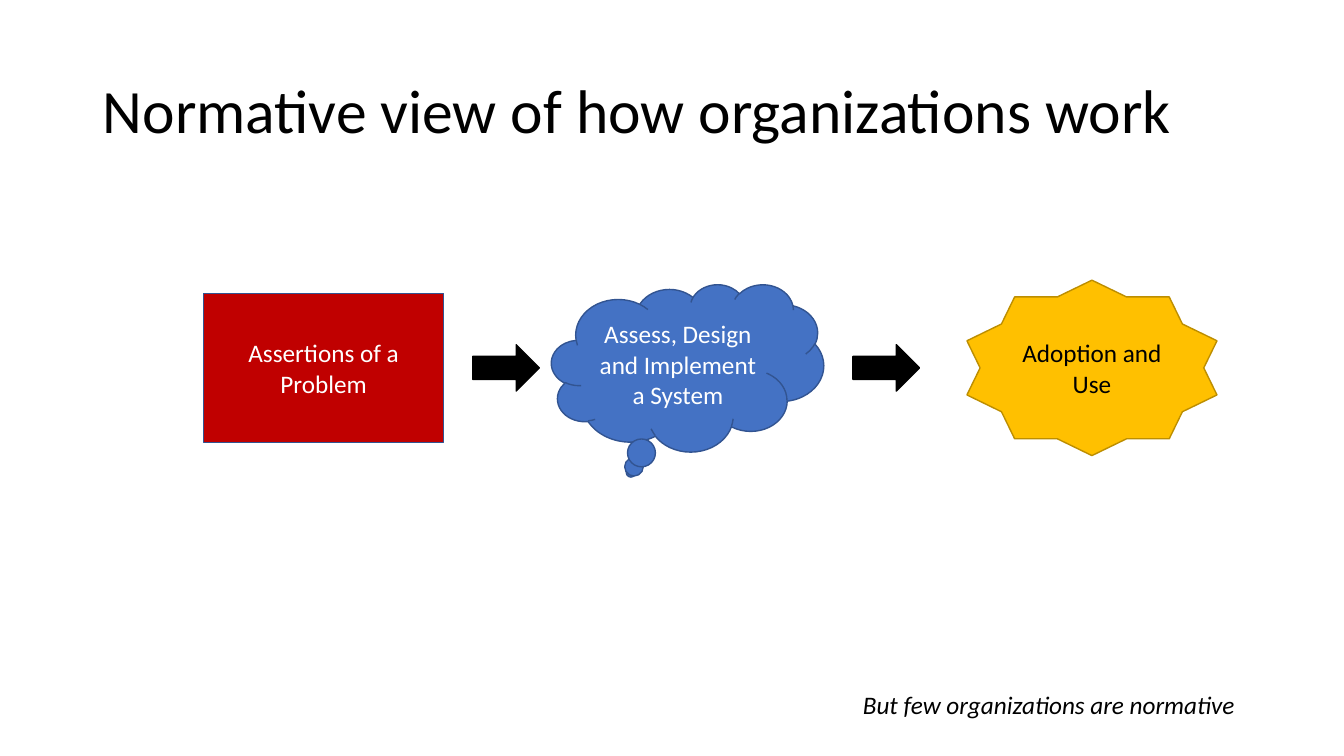
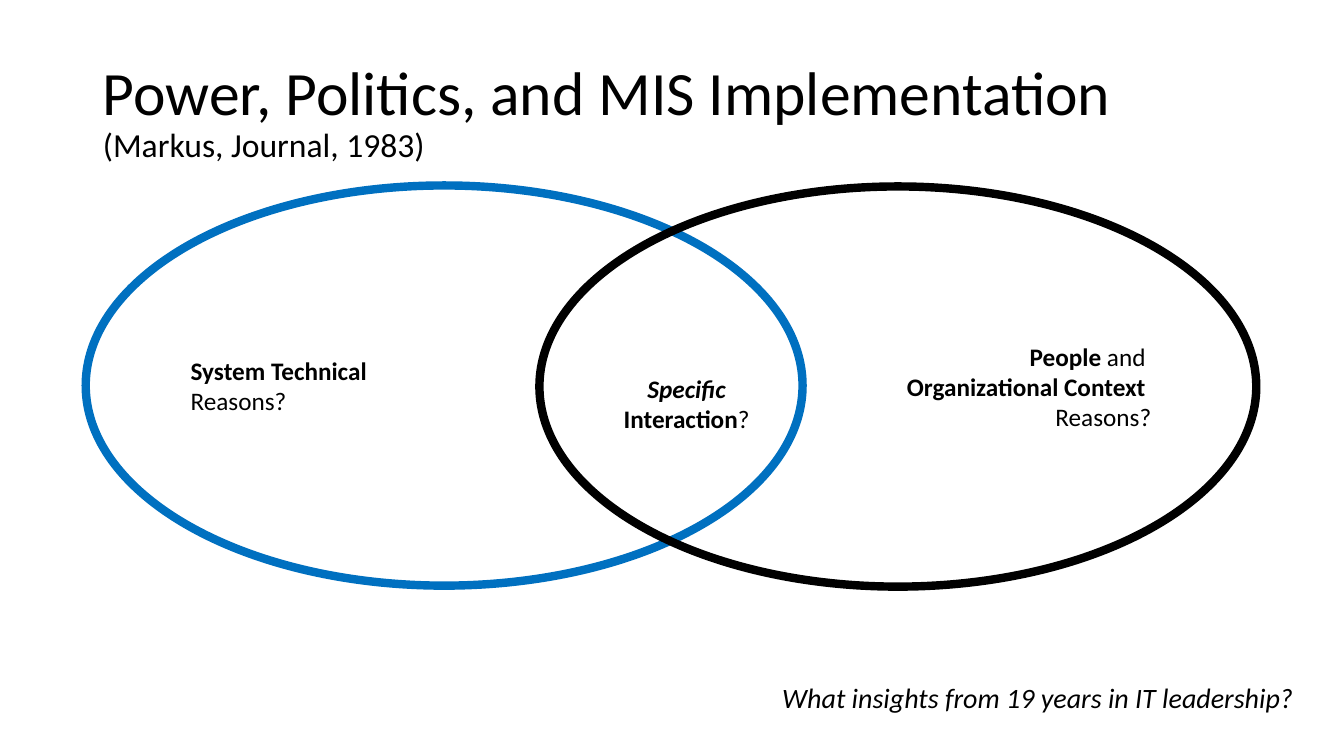
from pptx import Presentation
from pptx import util as u
from pptx.dml.color import RGBColor
from pptx.enum import shapes, text

WIDTH, HEIGHT = 13.33, 7.5
FONT = "Calibri"
COLORS = {"black": "000000", "white": "FFFFFF", "red": "C00000", "blue": "4472C4",
          "gold": "FFC000", "navy": "325491", "bronze": "BD8E00", "azure": "0070C0"}
SHAPE = shapes.MSO_SHAPE
ALIGN = text.PP_ALIGN
ANCHOR = text.MSO_ANCHOR
BOLD, PLAIN = {"bold": True}, {"bold": False}

# Content: a text is a list of paragraphs, a paragraph a list of (words, format) runs
FLOW_TITLE = [[("Normative view of how organizations work", {})]]
FLOW_NOTE = [[("But few organizations are normative", {})]]
FLOW_AXIS = 3.65
FLOW_STEPS = [  # preset, left, width, height, fill, line, text colour, lines
    (SHAPE.RECTANGLE, 2.02, 2.38, 1.48, "red", "navy", "white", ["Assertions of a", "Problem"]),
    (SHAPE.CLOUD_CALLOUT, 5.47, 2.7, 1.66, "blue", "navy", "white",
     ["Assess, Design and Implement a System"]),
    (SHAPE.STAR_10_POINT, 9.59, 2.48, 1.74, "gold", "bronze", "black", ["Adoption and Use"]),
    (SHAPE.RIGHT_ARROW, 4.69, 0.66, 0.46, "black", "black", "black", []),
    (SHAPE.RIGHT_ARROW, 8.46, 0.66, 0.46, "black", "black", "black", []),
]

VENN_TITLE = [[("Power, Politics, and MIS Implementation", {}), (" \n", {"size": 28}),
               ("(Markus, Journal, 1983)", {"size": 24})]]
VENN_NOTE = [[("What insights from 19 years in IT leadership?", {})]]
VENN_OVERLAP = [[("Specific", {"bold": True, "italic": True})],
                [("Interaction", BOLD), ("?", PLAIN)]]
VENN_SIZE = (7.11, 3.97)
VENN_CIRCLES = [  # left, top, line, alignment, left and right inset, text
    (0.85, 1.84, "azure", ALIGN.LEFT, (0, 0.1),
     [[("System Technical \n", BOLD), ("Reasons?", PLAIN)]]),
    (5.35, 1.85, "black", ALIGN.RIGHT, (0.1, 0),
     [[("People", BOLD), (" and \n", PLAIN), ("Organizational Context \n", BOLD),
       ("Reasons?", PLAIN)]]),
]


def rgb(name):
    return RGBColor.from_string(COLORS[name])


def write(shape, paragraphs, size=18, color="black", align=ALIGN.LEFT, anchor=ANCHOR.MIDDLE,
          spacing=None, **style):
    """Fill a shape with formatted runs; a newline ending a run breaks the line."""
    frame = shape.text_frame
    frame.vertical_anchor = anchor
    for index, runs in enumerate(paragraphs):
        paragraph = frame.add_paragraph() if index else frame.paragraphs[0]
        paragraph.alignment, paragraph.line_spacing = align, spacing
        for words, changes in runs:
            run = paragraph.add_run()
            run.text = words.rstrip("\n")
            run.font.name, run.font.color.rgb = FONT, rgb(color)
            look = {"size": size, **style, **changes}
            run.font.size = u.Pt(look.pop("size"))
            for name, value in look.items():
                setattr(run.font, name, value)
            if words.endswith("\n"):
                paragraph.add_line_break()


def add_titled_slide(presentation, title):
    slide = presentation.slides.add_slide(presentation.slide_layouts[5])
    holder = slide.shapes.title
    holder.left, holder.top, holder.width, holder.height = map(u.Inches, (0.92, 0.4, 11.5, 1.45))
    holder.text_frame.auto_size = text.MSO_AUTO_SIZE.NONE
    write(holder, title, size=44, spacing=0.9)
    return slide


def add_preset(slide, preset, box, line, line_width, fill=None):
    shape = slide.shapes.add_shape(preset, *map(u.Inches, box))
    shape.shadow.inherit = False
    if fill:
        shape.fill.solid()
        shape.fill.fore_color.rgb = rgb(fill)
    else:
        shape.fill.background()
    shape.line.color.rgb, shape.line.width = rgb(line), u.Pt(line_width)
    return shape


def add_label(slide, box, paragraphs, **style):
    label = slide.shapes.add_textbox(*map(u.Inches, box))
    label.text_frame.word_wrap = False
    label.text_frame.auto_size = text.MSO_AUTO_SIZE.SHAPE_TO_FIT_TEXT
    write(label, paragraphs, anchor=ANCHOR.TOP, **style)


def build_flow(presentation):
    slide = add_titled_slide(presentation, FLOW_TITLE)
    # Every step is centred on one horizontal axis
    for preset, left, width, height, fill, line, color, lines in FLOW_STEPS:
        box = (left, FLOW_AXIS - height / 2, width, height)
        step = add_preset(slide, preset, box, line, 1, fill)
        write(step, [[(words, {})] for words in lines], color=color, align=ALIGN.CENTER)
    add_label(slide, (8.46, 6.79, 3.93, 0.4), FLOW_NOTE, italic=True)


def build_venn(presentation):
    slide = add_titled_slide(presentation, VENN_TITLE)
    for left, top, line, align, insets, paragraphs in VENN_CIRCLES:
        circle = add_preset(slide, SHAPE.OVAL, (left, top, *VENN_SIZE), line, 6)
        frame = circle.text_frame
        frame.margin_left, frame.margin_right = map(u.Inches, insets)
        write(circle, paragraphs, align=align)
    add_label(slide, (6.08, 3.65, 1.46, 0.71), VENN_OVERLAP, align=ALIGN.CENTER)
    add_label(slide, (7.66, 6.7, 5.31, 0.44), VENN_NOTE, size=20, italic=True)


def main():
    presentation = Presentation()
    presentation.slide_width, presentation.slide_height = u.Inches(WIDTH), u.Inches(HEIGHT)
    build_flow(presentation)
    build_venn(presentation)
    presentation.save("out.pptx")


if __name__ == "__main__":
    main()
